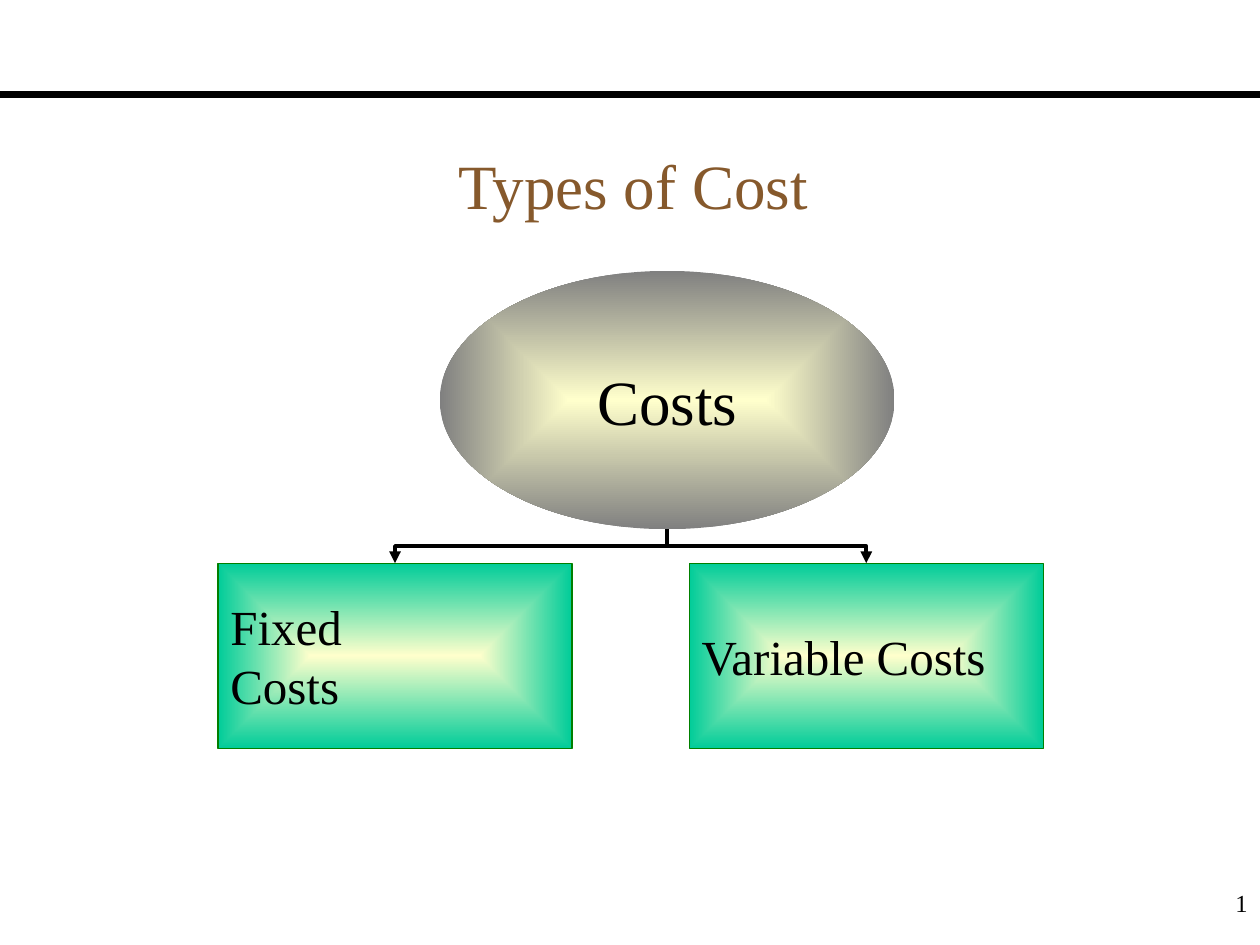
import dataclasses

import pptx
import pptx.dml.color
import pptx.enum.shapes
import pptx.enum.text
import pptx.oxml
import pptx.oxml.ns
import pptx.util
from pptx.util import Inches

SHAPE = pptx.enum.shapes.MSO_SHAPE
CONNECTOR = pptx.enum.shapes.MSO_CONNECTOR
ALIGN = pptx.enum.text.PP_ALIGN
MIDDLE = pptx.enum.text.MSO_ANCHOR.MIDDLE
qn = pptx.oxml.ns.qn


@dataclasses.dataclass(frozen=True)
class Theme:
    font: str = "Times New Roman"
    ink: str = "000000"
    title: str = "86592C"
    glow: str = "FFFFCC"
    root: str = "808080"
    leaf: str = "00CC99"
    leaf_line: str = "008000"
    large: int = 36
    medium: int = 28
    small: int = 14


THEME = Theme()


def rgb(value):
    return pptx.dml.color.RGBColor.from_string(value)


def add_xml(parent, xml):
    element = pptx.oxml.parse_xml(xml.replace("NS", pptx.oxml.ns.nsdecls("a"), 1))
    parent.append(element)
    return element


def set_text(tf, text, size, color=THEME.ink, align=ALIGN.LEFT):
    tf.word_wrap = True
    tf.text = text
    for p in tf.paragraphs:
        p.alignment = align
        for r in p.runs:
            r.font.name = THEME.font
            r.font.size = pptx.util.Pt(size)
            r.font.color.rgb = rgb(color)


def style_line(connector, width):
    connector.line.color.rgb = rgb(THEME.ink)
    connector.line.width = pptx.util.Pt(width)
    add_xml(connector._element.spPr, "<a:effectLst NS/>")


def add_node(s, kind, box, text, size, edge, align):
    sp = s.shapes.add_shape(kind, *box)
    sp.shadow.inherit = False
    sp.fill.gradient()
    for stop, color, position in zip(sp.fill.gradient_stops, (THEME.glow, edge), (0, 1)):
        stop.color.rgb = rgb(color)
        stop.position = position
    grad = sp._element.spPr.find(qn("a:gradFill"))
    grad.remove(grad.find(qn("a:lin")))
    add_xml(grad, '<a:path NS path="shape">'
                  '<a:fillToRect l="50000" t="50000" r="50000" b="50000"/></a:path>')
    sp.line.fill.background()
    sp.text_frame.vertical_anchor = MIDDLE
    set_text(sp.text_frame, text, size, align=align)
    return sp


def add_branch(s, root, leaf):
    x1, y1 = root.left + root.width // 2, root.top + root.height
    x2, y2 = leaf.left + leaf.width // 2, leaf.top
    connector = s.shapes.add_connector(CONNECTOR.ELBOW, x1, y1, x2, y2)
    connector.end_connect(leaf, 0)
    style_line(connector, 2.25)
    add_xml(connector.line._get_or_add_ln(), '<a:tailEnd NS type="triangle"/>')
    drop, span = y2 - y1, abs(x2 - x1)
    connector.left = (x1 + x2 - drop) // 2
    connector.top = (y1 + y2 - span) // 2
    connector.width, connector.height = drop, span
    xfrm = connector._element.spPr.find(qn("a:xfrm"))
    for name in ("flipH", "flipV"):
        xfrm.attrib.pop(name, None)
    xfrm.set("rot", str((90 if x2 < x1 else 270) * 60000))
    if x2 > x1:
        xfrm.set("flipH", "1")


def add_cost_tree(s, left, top, width, height):
    root_box = (left + Inches(1.76), top, Inches(3.61), Inches(2.05))
    root = add_node(s, SHAPE.OVAL, root_box, "Costs", THEME.large, THEME.root, ALIGN.CENTER)
    leaf_w, leaf_h = Inches(2.81), Inches(1.47)
    leaf_top = top + height - leaf_h
    leaves = ((left, "Fixed\nCosts"), (left + width - leaf_w, "Variable Costs"))
    for x, text in leaves:
        leaf = add_node(s, SHAPE.RECTANGLE, (x, leaf_top, leaf_w, leaf_h), text,
                        THEME.medium, THEME.leaf, ALIGN.LEFT)
        leaf.line.color.rgb = rgb(THEME.leaf_line)
        leaf.line.width = pptx.util.Pt(0.75)
        add_branch(s, root, leaf)


def add_rule(s, left, top, width):
    style_line(s.shapes.add_connector(CONNECTOR.STRAIGHT, left, top, left + width, top), 4.5)


def add_title(s, left, top, width, height):
    sp = s.shapes.title
    sp.left, sp.top, sp.width, sp.height = left, top, width, height
    tf = sp.text_frame
    tf.auto_size = pptx.enum.text.MSO_AUTO_SIZE.NONE
    tf.vertical_anchor = MIDDLE
    set_text(tf, "Types of Cost", THEME.large, THEME.title, ALIGN.CENTER)


def add_page_number(s, left, top, width, height):
    tf = s.shapes.add_textbox(left, top, width, height).text_frame
    set_text(tf, "1", THEME.small, align=ALIGN.RIGHT)
    r = tf.paragraphs[0].runs[0]._r
    field = add_xml(tf.paragraphs[0]._p,
                    '<a:fld NS id="{B6F15528-21DE-4FAA-801E-634DDDAF4B2B}" type="slidenum"/>')
    for child in list(r):
        field.append(child)
    r.getparent().remove(r)


def main():
    prs = pptx.Presentation()
    prs.slide_width, prs.slide_height = Inches(10), Inches(7.5)
    s = prs.slides.add_slide(prs.slide_layouts[5])
    add_rule(s, 0, Inches(0.75), prs.slide_width)
    add_title(s, Inches(3.16), Inches(1.15), Inches(3.73), Inches(0.62))
    add_cost_tree(s, Inches(1.73), Inches(2.15), Inches(6.55), Inches(3.79))
    add_page_number(s, Inches(7.92), Inches(7), Inches(2.08), Inches(0.5))
    prs.save("out.pptx")


if __name__ == "__main__":
    main()
